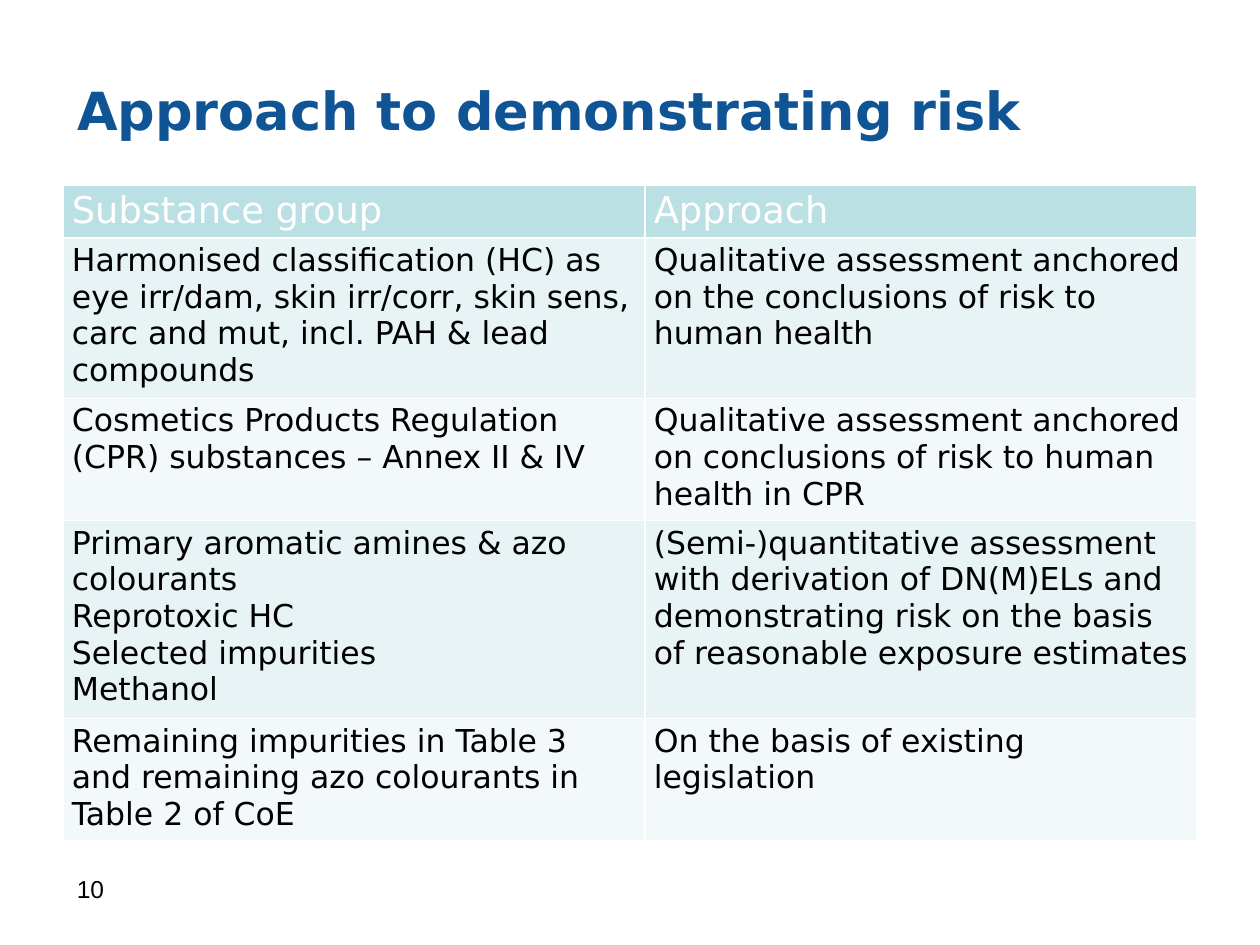
"""Build a slide with a title, a table of approaches and a page number."""
import pptx
import pptx.dml.color
import pptx.enum.text
import pptx.oxml
import pptx.oxml.ns
import pptx.util

Cm = pptx.util.Cm
Pt = pptx.util.Pt

COLOURS = {
    "title": "0F5494",
    "header": "BBE0E3",
    "odd_row": "E7F3F4",
    "even_row": "F3F9FA",
    "white": "FFFFFF",
    "black": "000000",
}
COLUMN_WIDTHS = [11.73, 11.13]
ROW_HEIGHTS = [1.07, 3.23, 2.46, 3.99, 2.46]
ROWS = [
    ("Substance group", "Approach"),
    (
        "Harmonised classification (HC) as eye irr/dam, skin irr/corr, "
        "skin sens, carc and mut, incl. PAH & lead compounds",
        "Qualitative assessment anchored on the conclusions of risk to human health",
    ),
    (
        "Cosmetics Products Regulation (CPR) substances – Annex II & IV",
        "Qualitative assessment anchored on conclusions of risk to human health in CPR",
    ),
    (
        "Primary aromatic amines & azo colourants\nReprotoxic HC\n"
        "Selected impurities\nMethanol",
        "(Semi-)quantitative assessment with derivation of DN(M)ELs and "
        "demonstrating risk on the basis of reasonable exposure estimates",
    ),
    (
        "Remaining impurities in Table 3 and remaining azo colourants in Table 2 of CoE",
        "On the basis of existing legislation",
    ),
]


def rgb(name):
    """Return the named palette colour."""
    return pptx.dml.color.RGBColor.from_string(COLOURS[name])


def write_text(text_frame, text, size, colour="black", font="DejaVu Sans", bold=False):
    """Fill a text frame with left-aligned paragraphs in one format."""
    text_frame.text = text
    text_frame.word_wrap = True
    for paragraph in text_frame.paragraphs:
        paragraph.alignment = pptx.enum.text.PP_ALIGN.LEFT
        for run in paragraph.runs:
            run.font.name = font
            run.font.size = Pt(size)
            run.font.bold = bold
            run.font.color.rgb = rgb(colour)


def add_borders(cell, colour, width):
    """Draw the four borders of a table cell."""
    properties = cell._tc.get_or_add_tcPr()
    for side in ("lnL", "lnR", "lnT", "lnB"):
        properties.append(pptx.oxml.parse_xml(
            f'<a:{side} {pptx.oxml.ns.nsdecls("a")} w="{Pt(width)}"><a:solidFill>'
            f'<a:srgbClr val="{COLOURS[colour]}"/></a:solidFill></a:{side}>'
        ))


def place_title(slide, left, top, width, height):
    """Place the slide title in its placeholder."""
    title = slide.shapes.title
    title.left, title.top, title.width, title.height = left, top, width, height
    text_frame = title.text_frame
    write_text(text_frame, "Approach to demonstrating risk", 30, "title", bold=True)
    text_frame.auto_size = pptx.enum.text.MSO_AUTO_SIZE.NONE
    text_frame.vertical_anchor = pptx.enum.text.MSO_ANCHOR.MIDDLE
    indent = Cm(1)
    paragraph_properties = text_frame.paragraphs[0]._p.get_or_add_pPr()
    paragraph_properties.set("marL", str(indent))
    paragraph_properties.set("indent", str(-indent))


def place_table(slide, left, top):
    """Place the table of substance groups and approaches."""
    width, height = Cm(sum(COLUMN_WIDTHS)), Cm(sum(ROW_HEIGHTS))
    table = slide.shapes.add_table(
        len(ROWS), len(COLUMN_WIDTHS), left, top, width, height
    ).table
    table.first_row = False
    table.horz_banding = False
    for column, column_width in zip(table.columns, COLUMN_WIDTHS):
        column.width = Cm(column_width)
    for index, (row, row_height, texts) in enumerate(zip(table.rows, ROW_HEIGHTS, ROWS)):
        row.height = Cm(row_height)
        if index == 0:
            fill, size, colour = "header", 21, "white"
        else:
            fill, size, colour = "odd_row" if index % 2 else "even_row", 18, "black"
        for cell, text in zip(row.cells, texts):
            cell.margin_left = cell.margin_right = Cm(0.18)
            cell.margin_top = cell.margin_bottom = Cm(0.09)
            write_text(cell.text_frame, text, size, colour)
            add_borders(cell, "white", 1)
            cell.fill.solid()
            cell.fill.fore_color.rgb = rgb(fill)


def place_page_number(slide, left, top, width, height):
    """Place the page number."""
    box = slide.shapes.add_textbox(left, top, width, height)
    write_text(box.text_frame, "10", 14, font="Arial")


def main():
    """Build and save the presentation."""
    presentation = pptx.Presentation()
    presentation.slide_width, presentation.slide_height = Cm(25.4), Cm(19.05)
    slide = presentation.slides.add_slide(presentation.slide_layouts[5])
    slide.background.fill.solid()
    slide.background.fill.fore_color.rgb = rgb("white")
    place_title(slide, Cm(1.3), Cm(0.91), Cm(22.86), Cm(2.59))
    place_page_number(slide, Cm(1.3), Cm(17.5), Cm(5.92), Cm(1.32))
    place_table(slide, Cm(1.27), Cm(3.73))
    presentation.save("out.pptx")


if __name__ == "__main__":
    main()
